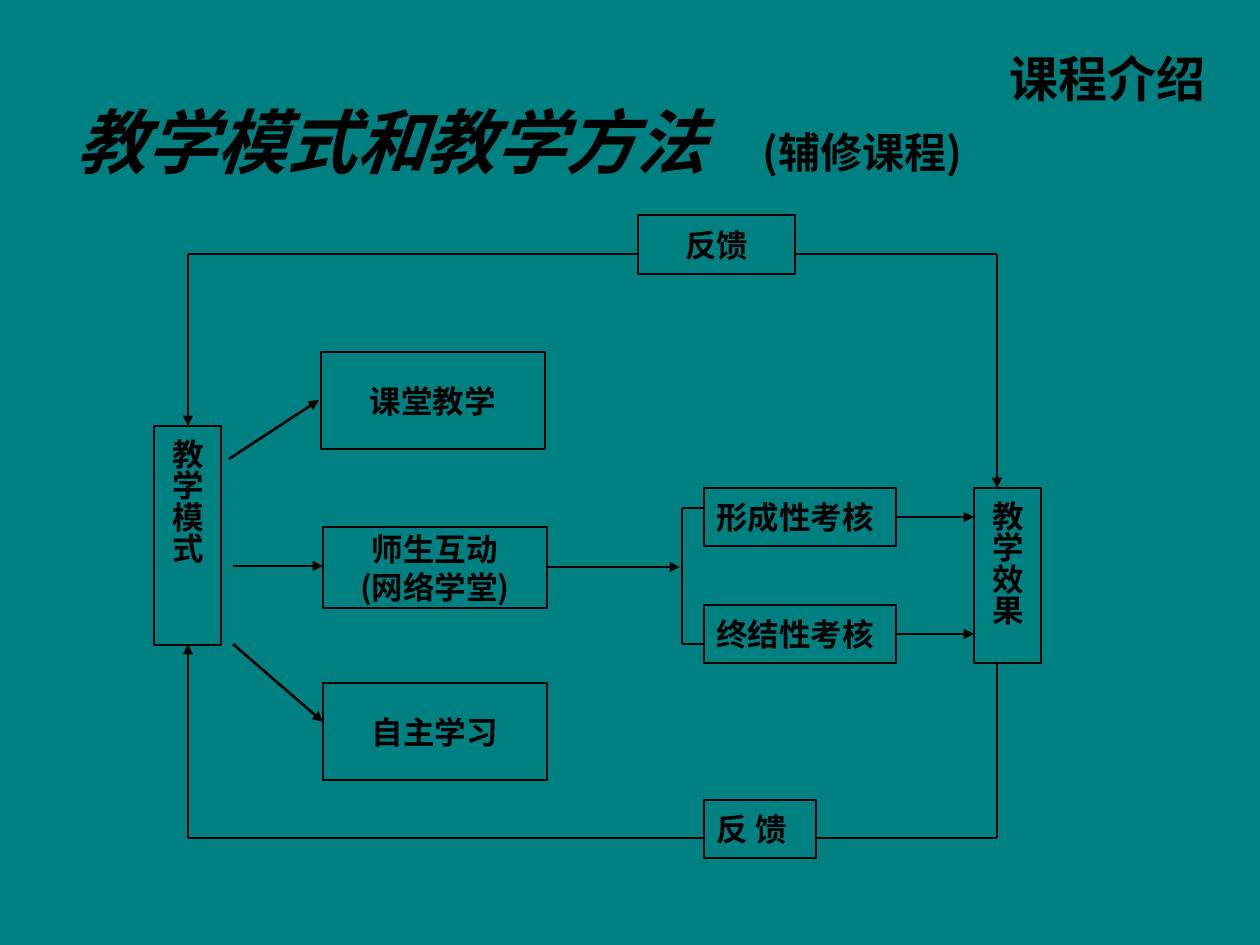
from itertools import pairwise

from lxml.etree import SubElement
from pptx import Presentation
from pptx.dml.color import RGBColor
from pptx.enum.shapes import MSO_CONNECTOR as Connector, MSO_SHAPE as Shape
from pptx.enum.text import MSO_ANCHOR as Anchor, PP_ALIGN as Align
from pptx.oxml.ns import qn
from pptx.util import Pt

EMU_PER_PX = 914400 / 126
TEAL = RGBColor(0x00, 0x80, 0x80)
BLACK = RGBColor(0x00, 0x00, 0x00)
FONT = "Noto Sans CJK SC"
LINE_WIDTH = Pt(1.5)

# text lines, left, top, width, height, alignment
BOXES = [
    (["课堂教学"], 321, 352, 224, 97, Align.CENTER),
    (["师生互动", "(网络学堂)"], 323, 527, 224, 81, Align.CENTER),
    (["自主学习"], 323, 683, 224, 97, Align.CENTER),
    (["形成性考核"], 704, 488, 192, 58, Align.JUSTIFY),
    (["终结性考核"], 704, 605, 192, 58, Align.JUSTIFY),
    (["反馈"], 638, 215, 157, 59, Align.CENTER),
    (["反 馈"], 704, 800, 112, 58, Align.JUSTIFY),
]
VERTICAL_BOXES = [
    (["教学模式"], 154, 426, 67, 219, Align.LEFT),
    (["教学效果"], 974, 488, 67, 175, Align.LEFT),
]
ARROWS = [
    [(229, 459), (319, 400)],
    [(233, 566), (323, 566)],
    [(233, 644), (323, 722)],
    [(546, 567), (680, 567)],
    [(896, 517), (974, 517)],
    [(896, 634), (974, 634)],
    [(795, 254), (997, 254), (997, 488)],
    [(638, 254), (188, 254), (188, 426)],
    [(704, 838), (188, 838), (188, 644)],
]
PLAIN_LINES = [
    [(704, 508), (682, 508), (682, 644), (704, 644)],
    [(997, 663), (997, 838), (816, 838)],
]


def px(*lengths):
    return [round(length * EMU_PER_PX) for length in lengths]


def add_run(paragraph, text, size, italic=False):
    run = paragraph.add_run()
    run.text = text
    styles = {"name": FONT, "size": Pt(size), "bold": True, "italic": italic}
    for key, value in styles.items():
        setattr(run.font, key, value)
    run.font.color.rgb = BLACK
    properties = run.font._element
    SubElement(properties, qn("a:ea")).set("typeface", FONT)


def add_heading(slide, left, top, width, height):
    """Add a bottom-anchored text box and return its paragraph."""
    frame = slide.shapes.add_textbox(*px(left, top, width, height)).text_frame
    frame.word_wrap = True
    frame.vertical_anchor = Anchor.BOTTOM
    return frame.paragraphs[0]


def add_tab_stop(paragraph, position):
    tabs = SubElement(paragraph._p.get_or_add_pPr(), qn("a:tabLst"))
    SubElement(tabs, qn("a:tab"), pos=str(px(position)[0]), algn="l")


def add_box(slide, lines, left, top, width, height, alignment):
    box = slide.shapes.add_shape(Shape.RECTANGLE, *px(left, top, width, height))
    box.shadow.inherit = False
    box.fill.background()
    box.line.color.rgb = BLACK
    box.line.width = LINE_WIDTH
    frame = box.text_frame
    frame.word_wrap = True
    frame.vertical_anchor = Anchor.MIDDLE
    for index, text in enumerate(lines):
        paragraph = frame.add_paragraph() if index else frame.paragraphs[0]
        paragraph.alignment = alignment
        add_run(paragraph, text, 18)
    return box


def add_vertical_box(slide, *box_values):
    box = add_box(slide, *box_values)
    box.text_frame._txBody.bodyPr.set("vert", "eaVert")


def add_route(slide, points, arrow=False):
    """Join the points with straight lines; an arrow ends at the last one."""
    for start, end in pairwise(points):
        line = slide.shapes.add_connector(Connector.STRAIGHT, *px(*start, *end))
        line.line.color.rgb = BLACK
        line.line.width = LINE_WIDTH
        if arrow and end == points[-1]:
            SubElement(line.line._get_or_add_ln(), qn("a:tailEnd"), type="triangle")
        SubElement(line._element.spPr, qn("a:effectLst"))


def main():
    presentation = Presentation()
    presentation.slide_width, presentation.slide_height = px(1260, 945)
    slide = presentation.slides.add_slide(presentation.slide_layouts[6])
    slide.background.fill.solid()
    slide.background.fill.fore_color.rgb = TEAL

    title = add_heading(slide, 64, 76, 1081, 112)
    add_tab_stop(title, 686)
    title.line_spacing = 0.8
    add_run(title, "教学模式和教学方法", 40, italic=True)
    add_run(title, "\t(辅修课程)", 24)

    for box in BOXES:
        add_box(slide, *box)
    for box in VERTICAL_BOXES:
        add_vertical_box(slide, *box)
    for points in ARROWS:
        add_route(slide, points, arrow=True)
    for points in PLAIN_LINES:
        add_route(slide, points)

    section = add_heading(slide, 997, 39, 238, 74)
    section.line_spacing = 0.8
    add_run(section, "课程介绍", 28)

    presentation.save("out.pptx")


if __name__ == "__main__":
    main()
